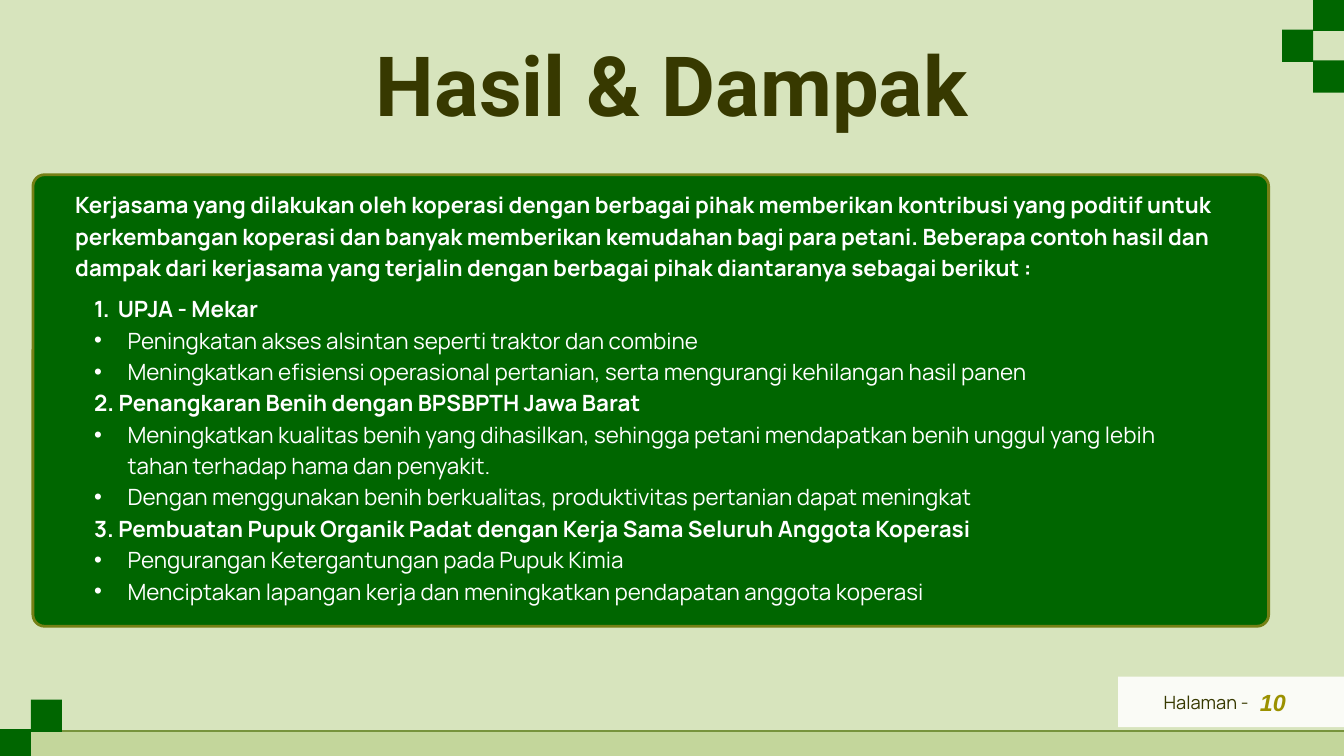
import pptx
import pptx.dml.color
import pptx.enum.shapes
import pptx.enum.text
import pptx.oxml
import pptx.oxml.ns
import pptx.util
from lxml import etree

Pt = pptx.util.Pt
RGBColor = pptx.dml.color.RGBColor
Align = pptx.enum.text.PP_ALIGN
ShapeType = pptx.enum.shapes.MSO_SHAPE
qn = pptx.oxml.ns.qn

PALE = RGBColor(0xD7, 0xE4, 0xBD)
SAGE = RGBColor(0xC3, 0xD6, 0x9B)
MOSS = RGBColor(0x77, 0x93, 0x3C)
GREEN = RGBColor(0x00, 0x66, 0x00)
OLIVE = RGBColor(0x75, 0x80, 0x15)
DARK = RGBColor(0x37, 0x39, 0x00)
GOLD = RGBColor(0x9B, 0x91, 0x00)
WHITE = RGBColor(0xFF, 0xFF, 0xFF)

WIDTH, HEIGHT = 1440, 810
BODY_SIZE, BODY_SPACING = 24, 33.6
HEADING_LEFT = 20.2

INTRO = (
    "Kerjasama yang dilakukan oleh koperasi dengan berbagai pihak memberikan "
    "kontribusi yang poditif untuk perkembangan koperasi dan banyak memberikan "
    "kemudahan bagi para petani. Beberapa contoh hasil dan dampak dari kerjasama "
    "yang terjalin dengan berbagai pihak diantaranya sebagai berikut :"
)
RESULTS = [
    ("UPJA - Mekar", [
        "Peningkatan akses alsintan seperti traktor dan combine",
        "Meningkatkan efisiensi operasional pertanian, serta mengurangi "
        "kehilangan hasil panen",
    ]),
    ("2. Penangkaran Benih dengan BPSBPTH Jawa Barat", [
        "Meningkatkan kualitas benih yang dihasilkan, sehingga petani mendapatkan "
        "benih unggul yang lebih tahan terhadap hama dan penyakit.",
        "Dengan menggunakan benih berkualitas, produktivitas pertanian dapat meningkat",
    ]),
    ("3. Pembuatan Pupuk Organik Padat dengan Kerja Sama Seluruh Anggota Koperasi", [
        "Pengurangan Ketergantungan pada Pupuk Kimia",
        "Menciptakan lapangan kerja dan meningkatkan pendapatan anggota koperasi",
    ]),
]


class SlideBuilder:
    def __init__(self, slide, font="Manrope"):
        self.slide = slide
        self.font = font

    def background(self, color):
        fill = self.slide.background.fill
        fill.solid()
        fill.fore_color.rgb = color

    def block(self, left, top, width, height, color, opacity=100,
              line=None, radius=0):
        kind = ShapeType.ROUNDED_RECTANGLE if radius else ShapeType.RECTANGLE
        shape = self.slide.shapes.add_shape(
            kind, Pt(left), Pt(top), Pt(width), Pt(height))
        shape.shadow.inherit = False
        shape.fill.solid()
        shape.fill.fore_color.rgb = color
        if radius:
            shape.adjustments[0] = radius / min(width, height)
        if opacity < 100:
            color_element = shape.fill._xPr.find(".//" + qn("a:srgbClr"))
            etree.SubElement(color_element, qn("a:alpha"), val=str(opacity * 1000))
        if line:
            shape.line.color.rgb = line
            shape.line.width = Pt(3)
        else:
            shape.line.fill.background()

    def rule(self, left, top, right, color, weight):
        connector = self.slide.shapes.add_connector(
            pptx.enum.shapes.MSO_CONNECTOR.STRAIGHT,
            Pt(left), Pt(top), Pt(right), Pt(top))
        connector.line.color.rgb = color
        connector.line.width = Pt(weight)
        etree.SubElement(connector._element.spPr, qn("a:effectLst"))

    def text_box(self, left, top, width, height):
        frame = self.slide.shapes.add_textbox(
            Pt(left), Pt(top), Pt(width), Pt(height)).text_frame
        frame.word_wrap = True
        frame.margin_left = frame.margin_right = 0
        frame.margin_top = frame.margin_bottom = 0
        return frame

    def paragraph(self, frame, text, size, spacing, color, font=None, bold=False,
                  italic=False, align=Align.LEFT, margin=0, indent=0, bullet=None):
        paragraph = frame.paragraphs[0]
        if paragraph.runs:
            paragraph = frame.add_paragraph()
        properties = paragraph._p.get_or_add_pPr()
        properties.set("marL", str(Pt(margin)))
        properties.set("indent", str(Pt(indent)))
        if bullet == "number":
            etree.SubElement(properties, qn("a:buFont"), typeface="+mj-lt")
            etree.SubElement(properties, qn("a:buAutoNum"), type="arabicPeriod")
        elif bullet:
            etree.SubElement(properties, qn("a:buFont"), typeface="Arial")
            etree.SubElement(properties, qn("a:buChar"), char=bullet)
        paragraph.alignment = align
        paragraph.line_spacing = Pt(spacing)
        run = paragraph.add_run()
        run.text = text
        run.font.name = font or self.font
        run.font.size = Pt(size)
        run.font.bold = bold
        run.font.italic = italic
        run.font.color.rgb = color

    def checker(self, squares):
        for left, top in squares:
            self.block(left, top, 33.12, 34.56, GREEN)


def main():
    presentation = pptx.Presentation()
    presentation.slide_width = Pt(WIDTH)
    presentation.slide_height = Pt(HEIGHT)
    slide = presentation.slides.add_slide(presentation.slide_layouts[6])
    builder = SlideBuilder(slide)
    builder.background(PALE)

    # Page number
    builder.block(1198, 725, 242, 54, WHITE, opacity=88)
    frame = builder.text_box(1217.5, 743, 120.2, 21.6)
    builder.paragraph(frame, "Halaman -", 19.6, 21, DARK, align=Align.RIGHT)
    frame = builder.text_box(1350, 740.9, 50.4, 28)
    builder.paragraph(frame, "10", 25, 26.7, GOLD, font="Arial",
                      bold=True, italic=True)

    # Title
    frame = builder.text_box(283, 47.5, 874, 122.4)
    builder.paragraph(frame, "Hasil & Dampak", 89, 95.2, DARK, font="Roboto",
                      bold=True, align=Align.CENTER)

    # Results panel
    builder.block(35.3, 187.2, 1324, 483.8, GREEN, line=OLIVE, radius=12.5)
    frame = builder.text_box(80.6, 200.2, 1221, 100)
    builder.paragraph(frame, INTRO, BODY_SIZE, BODY_SPACING, WHITE, bold=True)
    frame = builder.text_box(80.6, 311.8, 1221, 340.6)
    for index, (heading, points) in enumerate(RESULTS):
        hanging = 0 if index else 25.5
        builder.paragraph(frame, heading, BODY_SIZE, BODY_SPACING, WHITE, bold=True,
                          margin=HEADING_LEFT + hanging, indent=-hanging,
                          bullet=None if index else "number")
        for point in points:
            builder.paragraph(frame, point, BODY_SIZE, BODY_SPACING, WHITE,
                              margin=HEADING_LEFT + 36, indent=-36, bullet="•")

    # Footer band
    builder.block(0, 783.4, WIDTH, HEIGHT - 783.4, SAGE)
    builder.rule(0, 783.4, WIDTH, MOSS, 2)

    # Corner squares
    builder.checker([(1406.88, -1.44), (1373.76, 31.68), (1406.88, 64.8)])
    builder.checker([(0, 781.2), (33.12, 749.5)])

    presentation.save("out.pptx")


if __name__ == "__main__":
    main()
